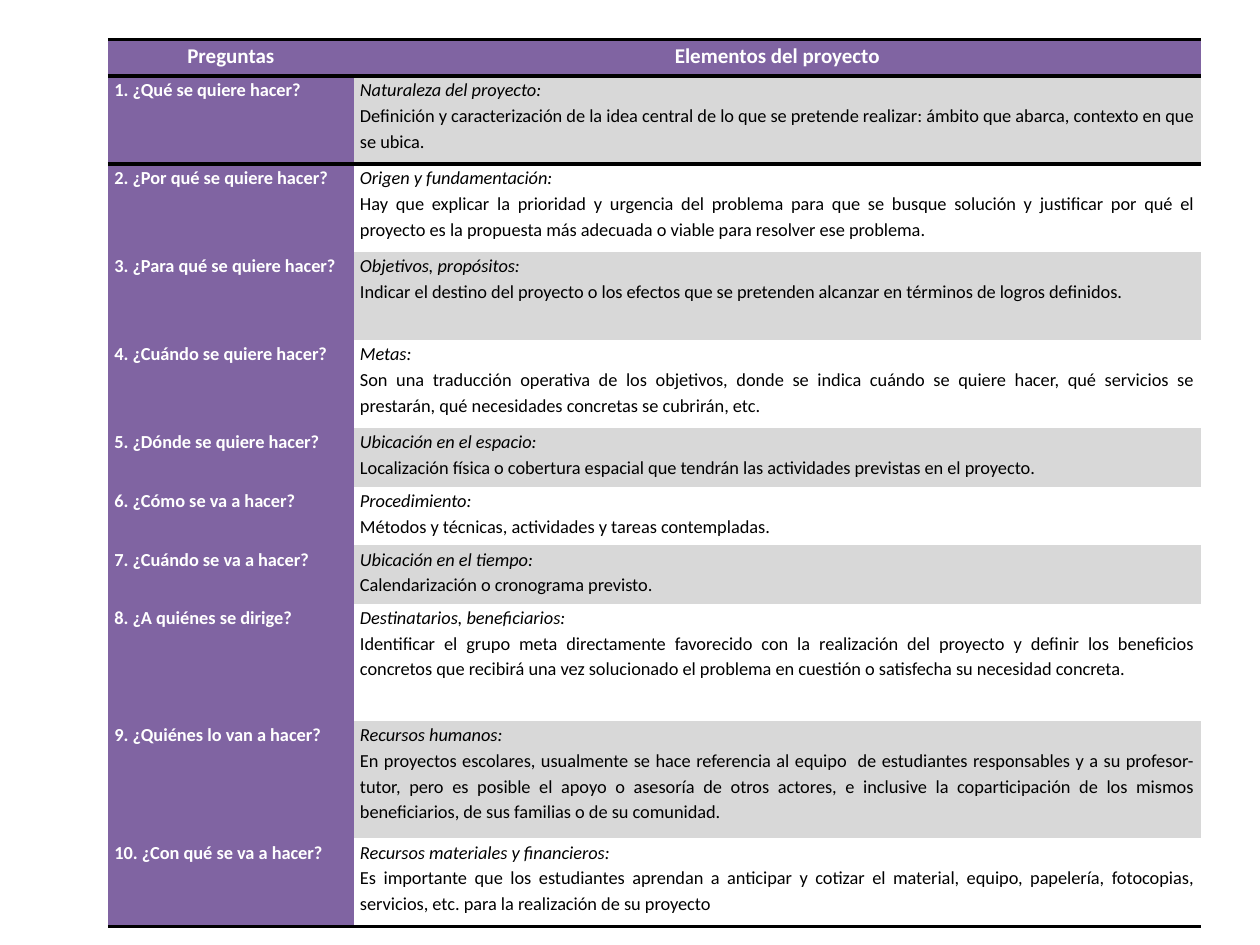
from dataclasses import dataclass

from lxml import etree
from pptx import Presentation
from pptx.dml.color import RGBColor
from pptx.enum import text
from pptx.oxml import ns
from pptx.util import Pt


@dataclass(frozen=True)
class Theme:
    font: str = "Calibri"
    purple: str = "8064A2"
    gray: str = "D8D8D8"
    white: str = "FFFFFF"
    black: str = "000000"
    header_size: float = 12
    body_size: float = 10.5
    rule_width: float = 2.25
    line_spacing: float = 1.15


THEME = Theme()
NO_STYLE_NO_GRID = "{2D5ABB26-0587-4C30-8999-92F81FD0307C}"

# Row heights by kind of row
HEADER, SHORT, MEDIUM, TALL = 21, 33.5, 50.3, 67
COLUMN_WIDTHS = (140.4, 484.2)
HEADINGS = ("Preguntas", "Elementos del proyecto")

# Height, question, project element, description
ROWS = [
    (MEDIUM, "1. ¿Qué se quiere hacer?", "Naturaleza del proyecto:",
     "Definición y caracterización de la idea central de lo que se pretende realizar: "
     "ámbito que abarca, contexto en que se ubica."),
    (MEDIUM, "2. ¿Por qué se quiere hacer?", "Origen y fundamentación:",
     "Hay que explicar la prioridad y urgencia del problema para que se busque solución "
     "y justificar por qué el proyecto es la propuesta más adecuada o viable para "
     "resolver ese problema."),
    (MEDIUM, "3. ¿Para qué se quiere hacer?", "Objetivos, propósitos:",
     "Indicar el destino del proyecto o los efectos que se pretenden alcanzar en "
     "términos de logros definidos."),
    (MEDIUM, "4. ¿Cuándo se quiere hacer?", "Metas:",
     "Son una traducción operativa de los objetivos, donde se indica cuándo se quiere "
     "hacer, qué servicios se prestarán, qué necesidades concretas se cubrirán, etc."),
    (SHORT, "5. ¿Dónde se quiere hacer?", "Ubicación en el espacio:",
     "Localización física o cobertura espacial que tendrán las actividades previstas "
     "en el proyecto."),
    (SHORT, "6. ¿Cómo se va a hacer?", "Procedimiento:",
     "Métodos y técnicas, actividades y tareas contempladas."),
    (SHORT, "7. ¿Cuándo se va a hacer?", "Ubicación en el tiempo:",
     "Calendarización o cronograma previsto."),
    (TALL, "8. ¿A quiénes se dirige?", "Destinatarios, beneficiarios:",
     "Identificar el grupo meta directamente favorecido con la realización del proyecto "
     "y definir los beneficios concretos que recibirá una vez solucionado el problema "
     "en cuestión o satisfecha su necesidad concreta."),
    (TALL, "9. ¿Quiénes lo van a hacer?", "Recursos humanos:",
     "En proyectos escolares, usualmente se hace referencia al equipo  de estudiantes "
     "responsables y a su profesor-tutor, pero es posible el apoyo o asesoría de otros "
     "actores, e inclusive la coparticipación de los mismos beneficiarios, de sus "
     "familias o de su comunidad."),
    (MEDIUM, "10. ¿Con qué se va a hacer?", "Recursos materiales y financieros:",
     "Es importante que los estudiantes aprendan a anticipar y cotizar el material, "
     "equipo, papelería, fotocopias, servicios, etc. para la realización de su proyecto"),
]


def format_paragraph(paragraph, size, color, alignment, bold=False, italic=False):
    paragraph.alignment = alignment
    paragraph.line_spacing = THEME.line_spacing
    for run in paragraph.runs:
        run.font.name = THEME.font
        run.font.size = Pt(size)
        run.font.bold = bold
        run.font.italic = italic
        run.font.color.rgb = RGBColor.from_string(color)


def prepare_cell(cell, lines, fill):
    cell.margin_left = cell.margin_right = Pt(3.6)
    cell.margin_top = cell.margin_bottom = 0
    if fill:
        cell.fill.solid()
        cell.fill.fore_color.rgb = RGBColor.from_string(fill)
    else:
        cell.fill.background()
    cell.text_frame.text = "\n".join(lines)
    return cell.text_frame.paragraphs


def add_rules(cell, *sides):
    """Draw black rules; sides are lnT and lnB, in that order."""
    properties = cell._tc.get_or_add_tcPr()
    for position, side in enumerate(sides):
        line = etree.Element(ns.qn(f"a:{side}"), w=str(Pt(THEME.rule_width)))
        fill = etree.SubElement(line, ns.qn("a:solidFill"))
        etree.SubElement(fill, ns.qn("a:srgbClr"), val=THEME.black)
        properties.insert(position, line)


def fill_header(cell, heading):
    paragraph, = prepare_cell(cell, [heading], THEME.purple)
    format_paragraph(paragraph, THEME.header_size, THEME.white,
                     text.PP_ALIGN.CENTER, bold=True)
    add_rules(cell, "lnT", "lnB")


def fill_question(cell, question):
    paragraph, = prepare_cell(cell, [question], THEME.purple)
    format_paragraph(paragraph, THEME.body_size, THEME.white,
                     text.PP_ALIGN.LEFT, bold=True)
    properties = paragraph._p.get_or_add_pPr()
    properties.set("marL", str(Pt(27)))
    properties.set("indent", str(Pt(-27)))


def fill_element(cell, element, description, fill):
    paragraphs = prepare_cell(cell, [element, description], fill)
    for paragraph, italic in zip(paragraphs, (True, False)):
        format_paragraph(paragraph, THEME.body_size, THEME.black,
                         text.PP_ALIGN.JUSTIFY, italic=italic)


def add_project_table(slide):
    heights = [HEADER] + [row[0] for row in ROWS]
    table = slide.shapes.add_table(
        len(heights), len(COLUMN_WIDTHS), Pt(61.7), Pt(22.5),
        Pt(sum(COLUMN_WIDTHS)), Pt(sum(heights))).table
    table._tbl.tblPr.find(ns.qn("a:tableStyleId")).text = NO_STYLE_NO_GRID
    table.first_row = table.horz_banding = False
    for column, width in zip(table.columns, COLUMN_WIDTHS):
        column.width = Pt(width)
    for row, height in zip(table.rows, heights):
        row.height = Pt(height)

    # Heading row
    for column, heading in enumerate(HEADINGS):
        fill_header(table.cell(0, column), heading)

    # Questions and elements, with every other row shaded
    for index, (_, question, element, description) in enumerate(ROWS, start=1):
        fill_question(table.cell(index, 0), question)
        fill_element(table.cell(index, 1), element, description,
                     THEME.gray if index % 2 else None)

    # Rules under the heading and at the foot
    for column in range(len(COLUMN_WIDTHS)):
        add_rules(table.cell(1, column), "lnT")
        add_rules(table.cell(len(ROWS), column), "lnB")


def main():
    presentation = Presentation()
    presentation.slide_width, presentation.slide_height = Pt(720), Pt(540)
    slide = presentation.slides.add_slide(presentation.slide_layouts[6])
    add_project_table(slide)
    presentation.save("out.pptx")


if __name__ == "__main__":
    main()
